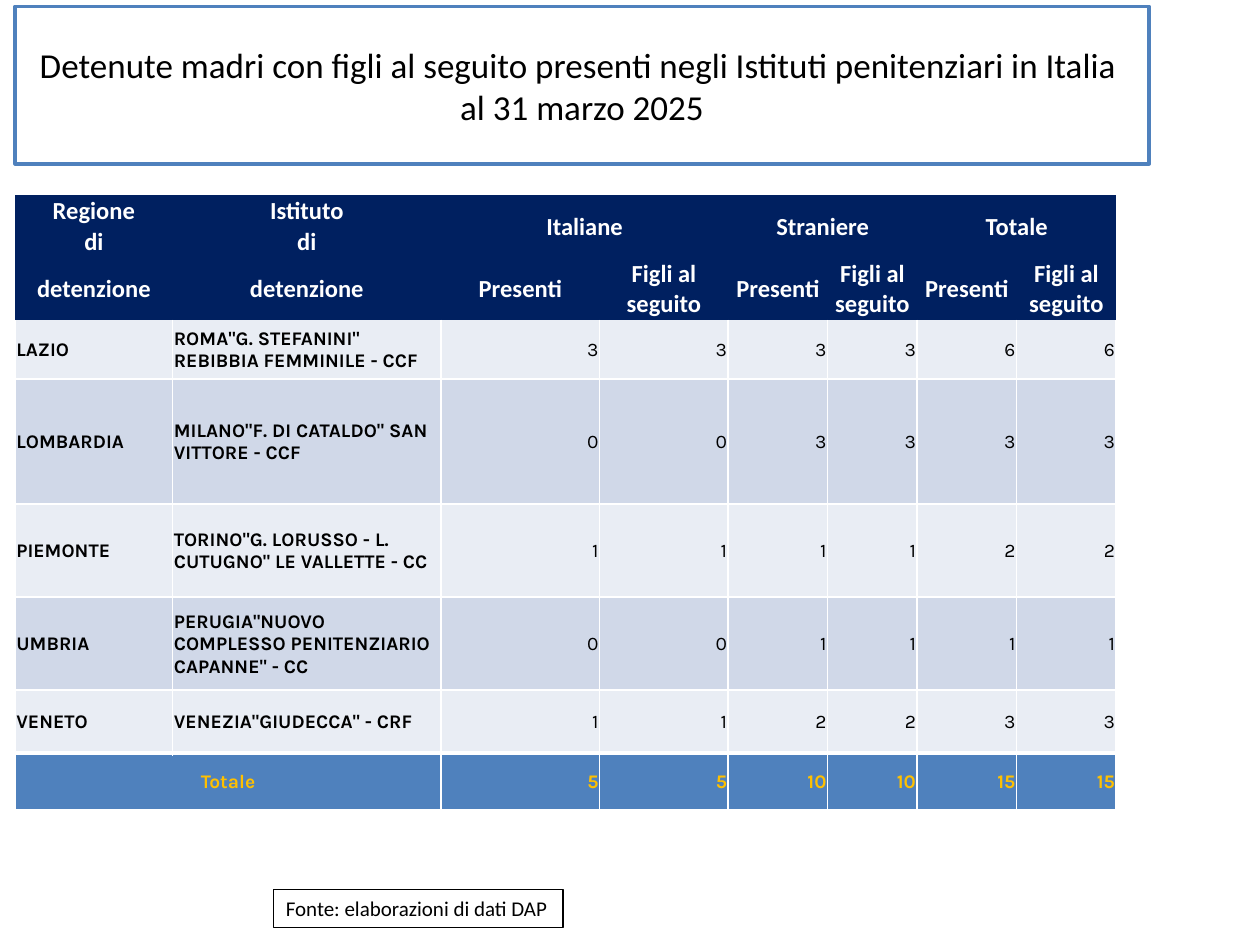
from dataclasses import dataclass

from lxml import etree
from pptx import Presentation
from pptx.dml.color import RGBColor
from pptx.enum.shapes import MSO_SHAPE
from pptx.enum.text import MSO_ANCHOR, MSO_AUTO_SIZE, PP_ALIGN
from pptx.oxml.ns import qn
from pptx.util import Inches, Pt

LEFT, CENTER, RIGHT = PP_ALIGN.LEFT, PP_ALIGN.CENTER, PP_ALIGN.RIGHT
MIDDLE = MSO_ANCHOR.MIDDLE
RECTANGLE = MSO_SHAPE.RECTANGLE
NO_AUTOFIT, FIT_SHAPE = MSO_AUTO_SIZE.NONE, MSO_AUTO_SIZE.SHAPE_TO_FIT_TEXT


@dataclass(frozen=True)
class Theme:
    white: str = "FFFFFF"
    black: str = "000000"
    navy: str = "002060"
    blue: str = "4F81BD"
    gold: str = "FFC000"
    bands: tuple = ("E9EDF4", "D0D8E8")
    text_font: str = "Calibri"
    data_font: str = "Karla"
    title_size: int = 20
    header_size: int = 14
    source_size: int = 12
    data_size: int = 11


THEME = Theme()

# The slide is a grid of 100 columns and 75 rows; boxes are left, top, width, height
GRID_COLUMNS, GRID_ROWS = 100, 75
TITLE_BOX = (1.2, 0.5, 90, 12.5)
TABLE_BOX = (1.2, 15.5, 87.4, 48.8)
SOURCE_BOX = (21.7, 70.6, 23, 3)

COLUMN_SHARES = (1.25, 2.13, 1.26, 1.02, 0.79, 0.71, 0.79, 0.79)
ROW_SHARES = (0.25, 0.25, 0.49, 0.47, 0.99, 0.74, 0.74, 0.5, 0.45)

GROUPS = ("Italiane", "Straniere", "Totale")
HEADER = [
    ["Regione", "Istituto"] + [text for group in GROUPS for text in (group, "")],
    ["di", "di"] + [""] * 6,
    ["detenzione", "detenzione"] + ["Presenti", "Figli al seguito"] * 3,
]
BODY = [
    ["LAZIO", 'ROMA"G. STEFANINI" REBIBBIA FEMMINILE - CCF', 3, 3, 3, 3, 6, 6],
    ["LOMBARDIA", 'MILANO"F. DI CATALDO" SAN VITTORE - CCF', 0, 0, 3, 3, 3, 3],
    ["PIEMONTE", 'TORINO"G. LORUSSO - L. CUTUGNO" LE VALLETTE - CC', 1, 1, 1, 1, 2, 2],
    ["UMBRIA", 'PERUGIA"NUOVO COMPLESSO PENITENZIARIO CAPANNE" - CC', 0, 0, 1, 1, 1, 1],
    ["VENETO", 'VENEZIA"GIUDECCA" - CRF', 1, 1, 2, 2, 3, 3],
]
TOTAL = ["Totale", "", 5, 5, 10, 10, 15, 15]


def place(presentation, box):
    """Turn a box in grid units into slide lengths."""
    column = presentation.slide_width / GRID_COLUMNS
    row = presentation.slide_height / GRID_ROWS
    left, top, width, height = box
    return int(left * column), int(top * row), int(width * column), int(height * row)


def format_paragraph(paragraph, font_name, size, color, align, bold=False):
    paragraph.alignment = align
    font = paragraph.font
    font.name, font.size, font.bold = font_name, Pt(size), bold
    font.color.rgb = RGBColor.from_string(color)


def outline(shape, color, width):
    shape.fill.solid()
    shape.fill.fore_color.rgb = RGBColor.from_string(THEME.white)
    shape.line.color.rgb = RGBColor.from_string(color)
    shape.line.width = Pt(width)


def set_borders(cell, widths):
    """Draw white borders, given as side: points; zero hides a side."""
    properties = cell._tc.get_or_add_tcPr()
    for side in "LRTB":
        width = widths.get(side, 0)
        line = etree.SubElement(properties, qn(f"a:ln{side}"), w=str(Pt(width)))
        if width:
            fill = etree.SubElement(line, qn("a:solidFill"))
            etree.SubElement(fill, qn("a:srgbClr"), val=THEME.white)
        else:
            etree.SubElement(line, qn("a:noFill"))


def fill_cell(cell, value, fill, borders, inset, **text_format):
    set_borders(cell, borders)
    cell.fill.solid()
    cell.fill.fore_color.rgb = RGBColor.from_string(fill)
    cell.vertical_anchor = MIDDLE
    cell.margin_left = cell.margin_right = cell.margin_top = Inches(inset)
    cell.margin_bottom = 0
    cell.text = str(value)
    format_paragraph(cell.text_frame.paragraphs[0], **text_format)


def add_title(slide, box):
    title = slide.shapes.title
    title.left, title.top, title.width, title.height = box
    outline(title, THEME.blue, 2)
    frame = title.text_frame
    frame.auto_size, frame.vertical_anchor = NO_AUTOFIT, MIDDLE
    frame.text = (
        "Detenute madri con figli al seguito presenti negli Istituti penitenziari in Italia \v"
        "al 31 marzo 2025"
    )
    format_paragraph(frame.paragraphs[0], THEME.text_font, THEME.title_size, THEME.black, CENTER)


def add_table(slide, box):
    left, top, width, height = box
    shape = slide.shapes.add_table(len(ROW_SHARES), len(COLUMN_SHARES), left, top, width, height)
    table = shape.table
    table.first_row = table.horz_banding = False
    for column, share in zip(table.columns, COLUMN_SHARES):
        column.width = int(width * share / sum(COLUMN_SHARES))
    for row, share in zip(table.rows, ROW_SHARES):
        row.height = int(height * share / sum(ROW_SHARES))

    # Header rows
    for r, values in enumerate(HEADER):
        for c, value in enumerate(values):
            fill_cell(table.cell(r, c), value, THEME.navy, {}, 0, font_name=THEME.text_font,
                      size=THEME.header_size, color=THEME.white, align=CENTER, bold=True)

    # Regions, then the total
    for index, values in enumerate(BODY + [TOTAL]):
        is_total = values is TOTAL
        borders = {"L": 1, "R": 1, "B": 1}
        if index:
            borders["T"] = 3 if is_total else 1
        if index == len(BODY) - 1:
            borders["B"] = 3
        for c, value in enumerate(values):
            is_label = c < 2
            label_align = CENTER if is_total else LEFT
            fill_cell(table.cell(len(HEADER) + index, c), value,
                      THEME.blue if is_total else THEME.bands[index % 2], borders, 0.01,
                      font_name=THEME.data_font, size=THEME.data_size,
                      color=THEME.gold if is_total else THEME.black,
                      align=label_align if is_label else RIGHT, bold=is_label or is_total)

    # Merged cells
    for c in range(2, len(COLUMN_SHARES), 2):
        table.cell(0, c).merge(table.cell(1, c + 1))
    last = len(ROW_SHARES) - 1
    table.cell(last, 0).merge(table.cell(last, 1))


def add_source(slide, box):
    source = slide.shapes.add_shape(RECTANGLE, *box)
    source.shadow.inherit = False
    outline(source, THEME.black, 0.75)
    frame = source.text_frame
    frame.word_wrap, frame.auto_size = False, FIT_SHAPE
    frame.vertical_anchor = MSO_ANCHOR.TOP
    frame.text = "Fonte: elaborazioni di dati DAP"
    format_paragraph(frame.paragraphs[0], THEME.text_font, THEME.source_size, THEME.black, LEFT)


def main():
    presentation = Presentation()
    presentation.slide_width, presentation.slide_height = Inches(10), Inches(7.5)
    slide = presentation.slides.add_slide(presentation.slide_layouts[5])
    add_title(slide, place(presentation, TITLE_BOX))
    add_source(slide, place(presentation, SOURCE_BOX))
    add_table(slide, place(presentation, TABLE_BOX))
    presentation.save("out.pptx")


if __name__ == "__main__":
    main()
